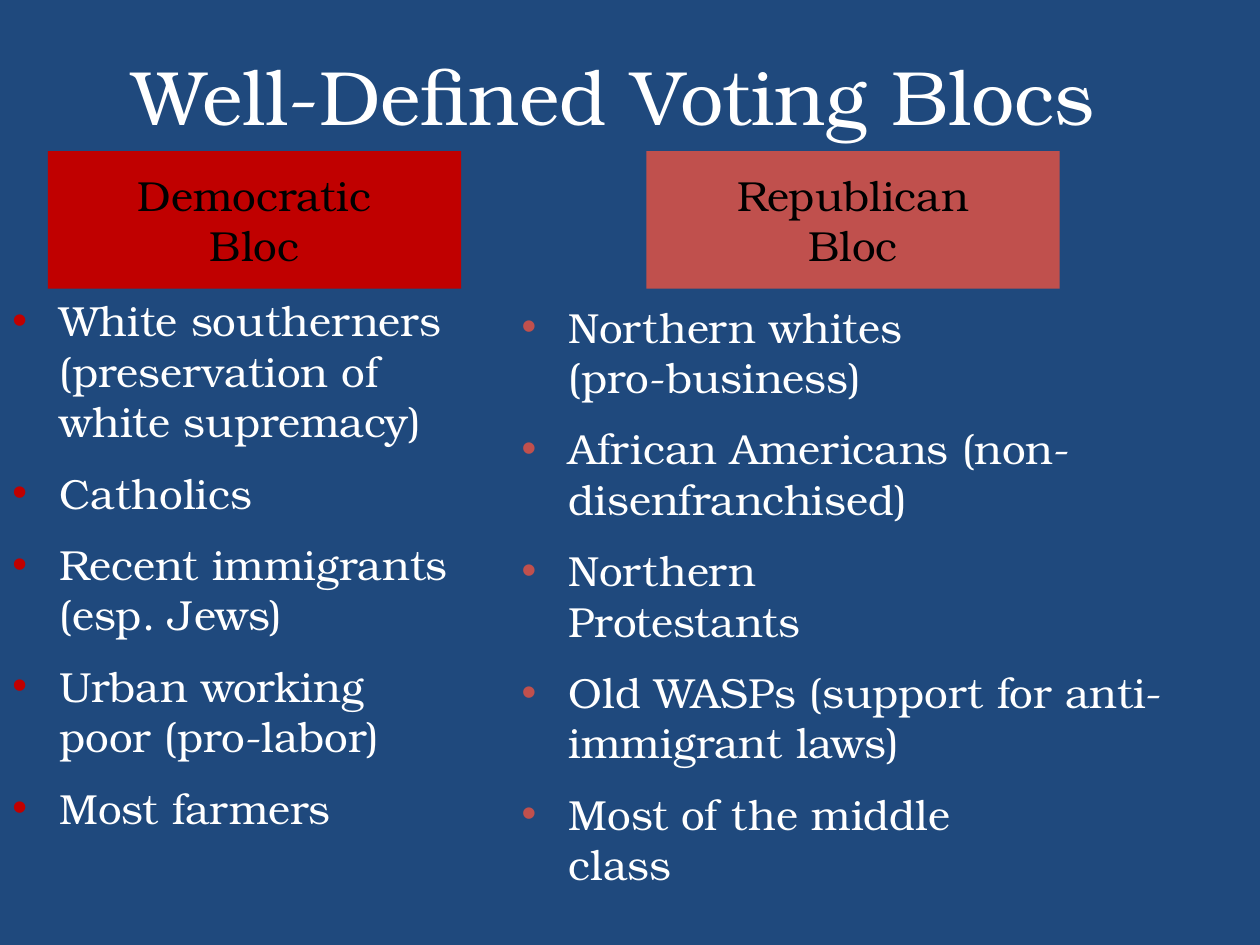
from lxml import etree
from pptx import Presentation
from pptx.dml.color import RGBColor
from pptx.enum import shapes, text
from pptx.oxml import parse_xml
from pptx.oxml.ns import nsdecls, qn
from pptx.util import Pt

COLORS = {"background": "1F497D", "body": "FFFFFF", "header": "000000",
          "shadow": "C00000", "democratic": "C00000", "republican": "C0504D"}
FONT = "TeX Gyre Bonum"
TITLE = "Well-Defined Voting Blocs"
TITLE_BOX = (0, 24, 702, 60.5)
BLOCS = [
    {"header": "Democratic\nBloc", "color": "democratic",
     "header_left": 27.36, "voters_box": (0, 165, 336, 327),
     "voters": ["White southerners\n(preservation of\nwhite supremacy)",
                "Catholics",
                "Recent immigrants\n(esp. Jews)",
                "Urban working \npoor (pro-labor)",
                "Most farmers"]},
    {"header": "Republican\nBloc", "color": "republican",
     "header_left": 369.36, "voters_box": (291, 168.5, 405, 356.5),
     "voters": ["Northern whites\n(pro-business)",
                "African Americans (non-disenfranchised)",
                "Northern \nProtestants",
                "Old WASPs (support for anti-immigrant laws)",
                "Most of the middle\nclass"]},
]
HEADER_TOP, HEADER_WIDTH, HEADER_HEIGHT = 86.4, 236.16, 78.48
BULLET_INDENT = 27
VOTER_GAP = 12


def rgb(name):
    return RGBColor.from_string(COLORS[name])


def set_all(target, values):
    for name, value in values.items():
        setattr(target, name, value)


def write(paragraph, words, size, color):
    paragraph.text = words
    for run in paragraph.runs:
        set_all(run.font, {"name": FONT, "size": Pt(size)})
        run.font.color.rgb = rgb(color)


def add_bullet(paragraph, color):
    """Give the paragraph a hanging, coloured bullet."""
    props = paragraph._p.get_or_add_pPr()
    props.set("marL", str(Pt(BULLET_INDENT)))
    props.set("indent", str(-Pt(BULLET_INDENT)))
    bullet_color = etree.SubElement(props, qn("a:buClr"))
    etree.SubElement(bullet_color, qn("a:srgbClr"), val=COLORS[color])
    etree.SubElement(props, qn("a:buFont"), typeface="Arial")
    etree.SubElement(props, qn("a:buChar"), char="•")


def add_title(slide):
    title = slide.shapes.title
    set_all(title, dict(zip(("left", "top", "width", "height"), map(Pt, TITLE_BOX))))
    set_all(title.text_frame, {"word_wrap": True,
                               "vertical_anchor": text.MSO_ANCHOR.TOP,
                               "auto_size": text.MSO_AUTO_SIZE.SHAPE_TO_FIT_TEXT})
    line = title.text_frame.paragraphs[0]
    line.alignment = text.PP_ALIGN.CENTER
    write(line, TITLE, 44, "body")
    shadow = parse_xml(
        f'<a:effectLst {nsdecls("a")}>'
        f'<a:outerShdw blurRad="{Pt(3)}" dist="{Pt(3)}" dir="2700000" algn="tl">'
        f'<a:srgbClr val="{COLORS["shadow"]}"/></a:outerShdw></a:effectLst>')
    line.runs[0].font.fill._xPr.find(qn("a:solidFill")).addnext(shadow)


def add_header(slide, bloc):
    header = slide.shapes.add_shape(
        shapes.MSO_SHAPE.RECTANGLE, Pt(bloc["header_left"]), Pt(HEADER_TOP),
        Pt(HEADER_WIDTH), Pt(HEADER_HEIGHT))
    header.shadow.inherit = False
    header.fill.solid()
    header.fill.fore_color.rgb = rgb(bloc["color"])
    header.line.fill.background()
    set_all(header.text_frame, {"word_wrap": False,
                                "vertical_anchor": text.MSO_ANCHOR.MIDDLE})
    line = header.text_frame.paragraphs[0]
    line.alignment = text.PP_ALIGN.CENTER
    write(line, bloc["header"], 24, "header")


def add_voters(slide, bloc):
    frame = slide.shapes.add_textbox(*map(Pt, bloc["voters_box"])).text_frame
    set_all(frame, {"word_wrap": True,
                    "auto_size": text.MSO_AUTO_SIZE.SHAPE_TO_FIT_TEXT})
    for index, voter in enumerate(bloc["voters"]):
        line = frame.add_paragraph() if index else frame.paragraphs[0]
        line.space_before = Pt(VOTER_GAP)
        add_bullet(line, bloc["color"])
        write(line, voter, 24, "body")


def main():
    deck = Presentation()
    set_all(deck, {"slide_width": Pt(720), "slide_height": Pt(540)})
    slide = deck.slides.add_slide(deck.slide_layouts[5])
    slide.background.fill.solid()
    slide.background.fill.fore_color.rgb = rgb("background")
    add_title(slide)
    for add_part in (add_header, add_voters):
        for bloc in BLOCS:
            add_part(slide, bloc)
    deck.save("out.pptx")


if __name__ == "__main__":
    main()
